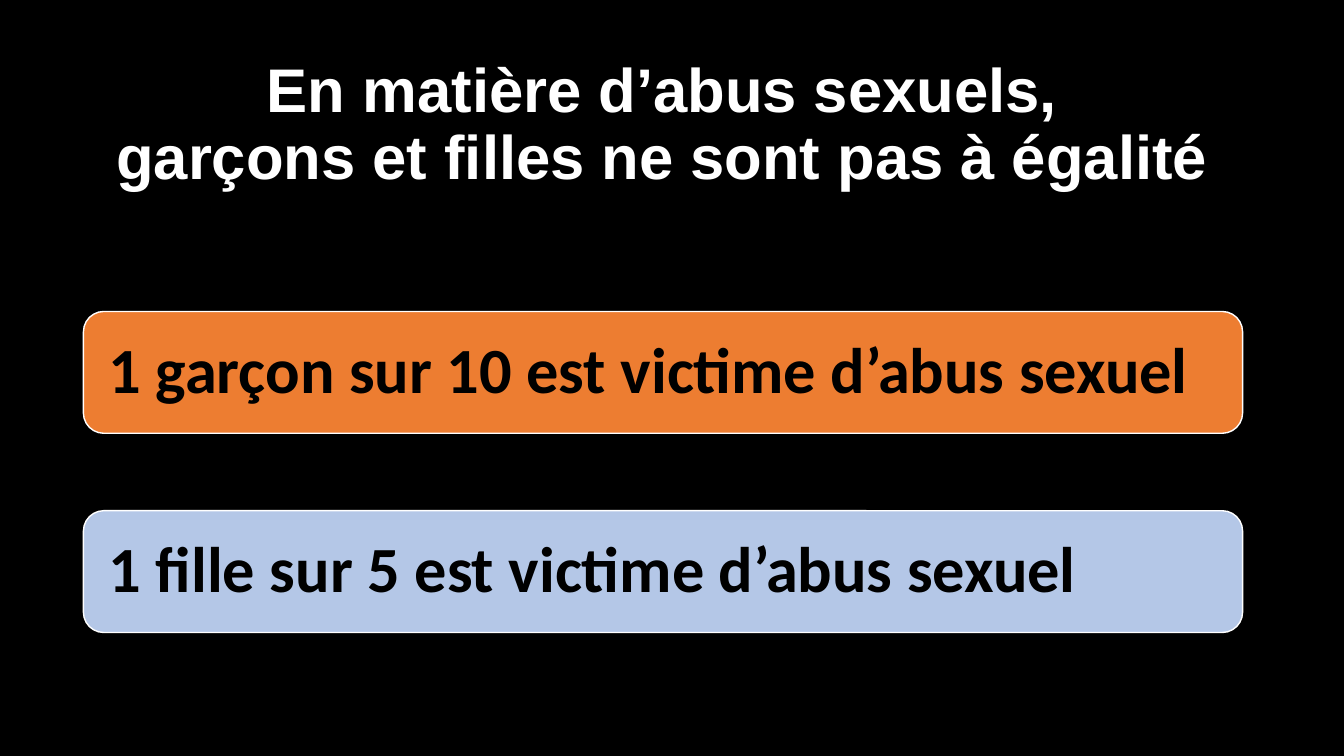
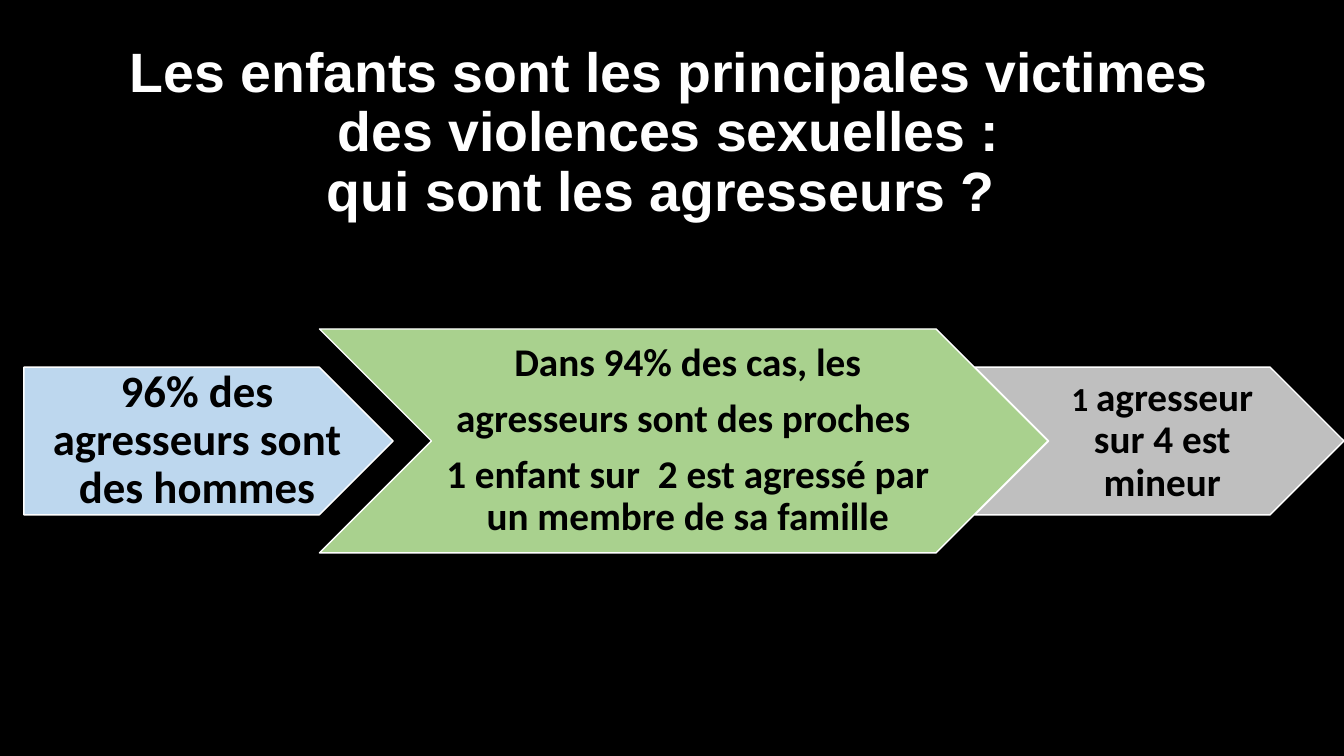
import pptx
import pptx.util
import pptx.dml.color
import pptx.enum.shapes
import pptx.enum.text

Pt = pptx.util.Pt
SHAPES = pptx.enum.shapes.MSO_SHAPE
ALIGN = pptx.enum.text.PP_ALIGN

COLOURS = {
    "background": "000000", "title": "FFFFFF", "outline": "FFFFFF", "text": "000000",
    "boys": "ED7D31", "girls": "B4C7E7",
    "men": "BDD7EE", "relatives": "A9D18E", "minors": "BFBFBF",
}
TITLE_FONT, BODY_FONT = "Arial", "Calibri"
LINE_SPACING = 0.9
SPACE_AFTER = 0.35  # share of the text size

# Content: a paragraph is a list of (text, size) runs
EQUALITY_TITLE = "En matière d’abus sexuels,\vgarçons et filles ne sont pas à égalité"
RATES = [
    ("boys", "1 garçon sur 10 est victime d’abus sexuel"),
    ("girls", "1 fille sur 5 est victime d’abus sexuel"),
]
AGGRESSOR_TITLE = ("Les enfants sont les principales victimes\v des violences sexuelles : \v"
                   "qui sont les agresseurs ? ")
# colour, shape, left, width, height, margins (left, top, right, bottom), paragraphs
ARROWS = [
    ("men", SHAPES.PENTAGON, 17.1, 263.7, 105.6, (13.5, 6.5, 3.5, 6.5),
     [[("96% des agresseurs sont des hommes", 32)]]),
    ("relatives", SHAPES.CHEVRON, 228.2, 520.4, 160, (8.5, 5.8, 3, 5.8),
     [[("Dans 94% des cas, les", 28)],
      [("agresseurs sont des proches ", 28)],
      [("1 enfant sur  2 est agressé par un membre de sa famille", 28)]]),
    ("minors", SHAPES.CHEVRON, 696.3, 263.7, 105.6, (7.2, 5, 3, 5),
     [[("1 ", 24), ("agresseur sur 4 est mineur", 28)]]),
]
ARROW_AXIS = 315


def rgb(name):
    return pptx.dml.color.RGBColor.from_string(COLOURS[name])


def style(paragraph, align, font, colour):
    paragraph.alignment = align
    paragraph.line_spacing = LINE_SPACING
    for run in paragraph.runs:
        run.font.name = font
        run.font.bold = True
        run.font.color.rgb = rgb(colour)


def add_slide(deck, title, size, box):
    """Black slide with a centred white title."""
    slide = deck.slides.add_slide(deck.slide_layouts[6])
    slide.background.fill.solid()
    slide.background.fill.fore_color.rgb = rgb("background")
    frame = slide.shapes.add_textbox(*map(Pt, box)).text_frame
    frame.word_wrap = True
    frame.vertical_anchor = pptx.enum.text.MSO_ANCHOR.MIDDLE
    frame.text = title
    heading = frame.paragraphs[0]
    style(heading, ALIGN.CENTER, TITLE_FONT, "title")
    for run in heading.runs:
        run.font.size = Pt(size)
    return slide


def add_panel(slide, kind, box, colour, margins, paragraphs, align):
    """Outlined shape holding bold black text."""
    panel = slide.shapes.add_shape(kind, *map(Pt, box))
    panel.shadow.inherit = False
    panel.fill.solid()
    panel.fill.fore_color.rgb = rgb(colour)
    panel.line.color.rgb = rgb("outline")
    panel.line.width = Pt(1)

    frame = panel.text_frame
    frame.word_wrap = True
    frame.vertical_anchor = pptx.enum.text.MSO_ANCHOR.MIDDLE
    (frame.margin_left, frame.margin_top,
     frame.margin_right, frame.margin_bottom) = map(Pt, margins)
    for index, runs in enumerate(paragraphs):
        paragraph = frame.add_paragraph() if index else frame.paragraphs[0]
        for text, size in runs:
            run = paragraph.add_run()
            run.text = text
            run.font.size = Pt(size)
        style(paragraph, align, BODY_FONT, "text")
        if index < len(paragraphs) - 1:
            paragraph.space_after = Pt(runs[-1][1] * SPACE_AFTER)


def main():
    deck = pptx.Presentation()
    deck.slide_width, deck.slide_height = Pt(960), Pt(540)

    # Rates among boys and girls: bars at an equal step
    slide = add_slide(deck, EQUALITY_TITLE, 44, (20.9, 31.7, 905, 116.6))
    for row, (group, text) in enumerate(RATES):
        add_panel(slide, SHAPES.ROUNDED_RECTANGLE, (59.6, 222.5 + 142.3 * row, 828, 87),
                  group, (13.8,) * 4, [[(text, 46)]], ALIGN.LEFT)

    # Aggressors: arrows centred on one axis
    slide = add_slide(deck, AGGRESSOR_TITLE, 39.6, (17.3, 28.8, 920.9, 133.9))
    for group, kind, left, width, height, margins, paragraphs in ARROWS:
        add_panel(slide, kind, (left, ARROW_AXIS - height / 2, width, height),
                  group, margins, paragraphs, ALIGN.CENTER)

    deck.save("out.pptx")


if __name__ == "__main__":
    main()
